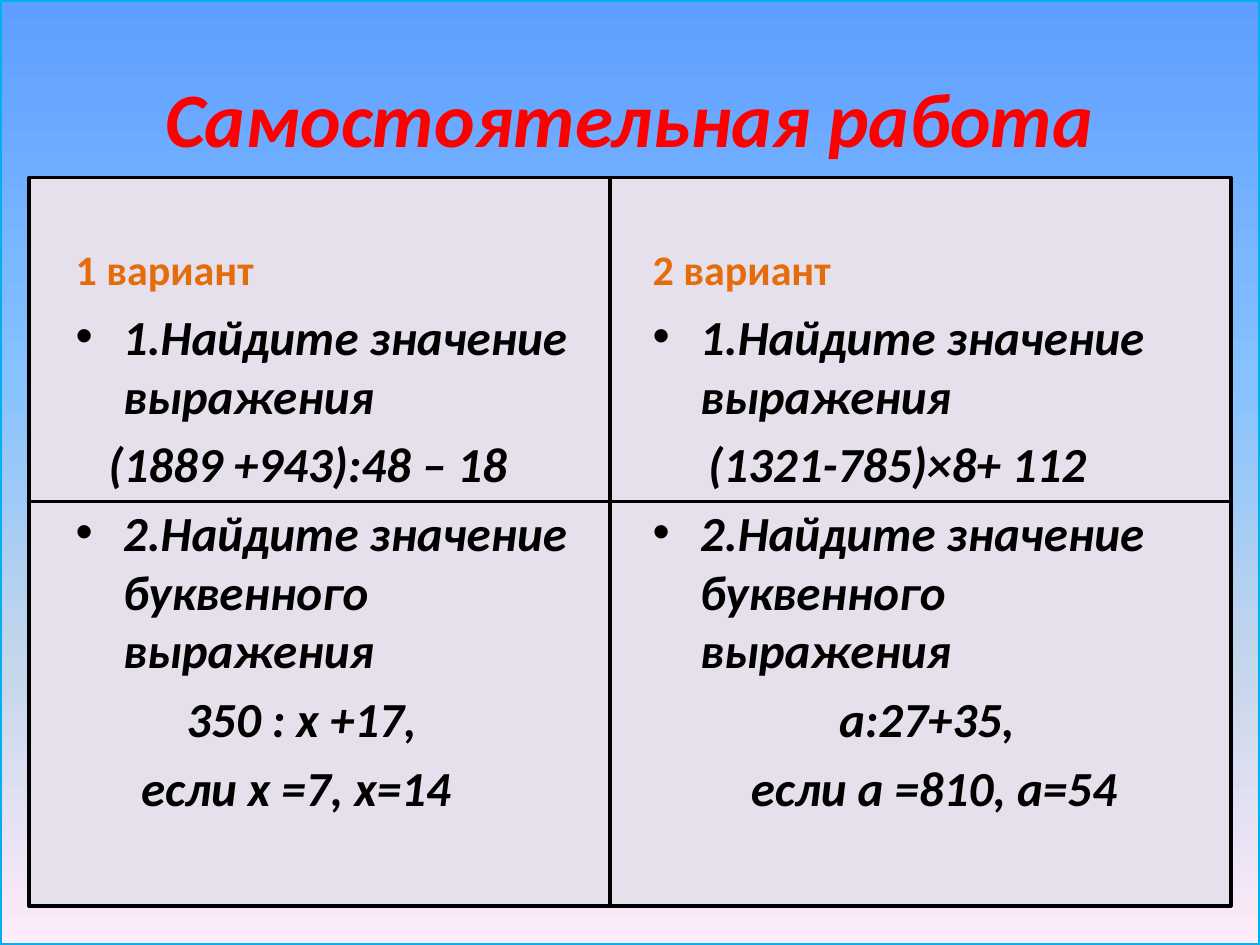
from copy import deepcopy

from pptx import Presentation
from pptx.dml.color import RGBColor
from pptx.enum import shapes, text
from pptx.oxml.ns import qn
from pptx.util import Inches, Pt

BLACK = RGBColor(0x00, 0x00, 0x00)
RED = RGBColor(0xFF, 0x00, 0x00)
ORANGE = RGBColor(0xE4, 0x6C, 0x0A)
LILAC = RGBColor(0xE6, 0xE0, 0xEC)
SKY = RGBColor(0x00, 0xB0, 0xF0)
GRADIENT = [
    (0, RGBColor(0x5E, 0x9E, 0xFF)),
    (0.4, RGBColor(0x85, 0xC2, 0xFF)),
    (0.7, RGBColor(0xC4, 0xD6, 0xEB)),
    (1, RGBColor(0xFF, 0xEB, 0xFA)),
]

# Panel edges and dividers, in inches
LEFT, TOP, RIGHT, BOTTOM = 0.23, 1.41, 9.77, 7.19
ROW_LINE, COLUMN_LINE = 3.98, 4.84

# Each variant: column left, heading, tasks as (text, indent); None means a bullet
FIRST_TASK = ("1.Найдите значение выражения", None)
SECOND_TASK = ("2.Найдите значение буквенного выражения", None)
VARIANTS = [
    (0.5, "1 вариант", [
        FIRST_TASK, ("(1889 +943):48 – 18", 0.26),
        SECOND_TASK, ("350 : х +17,", 0.88), ("если х =7, х=14", 0.52)]),
    (5.08, "2 вариант", [
        FIRST_TASK, ("(1321-785)×8+ 112", 0.44),
        SECOND_TASK, ("а:27+35,", 1.48), ("если а =810, а=54", 0.78)]),
]


def add_rectangle(slide, left, top, width, height, line_color):
    shape = slide.shapes.add_shape(
        shapes.MSO_SHAPE.RECTANGLE,
        Inches(left), Inches(top), Inches(width), Inches(height))
    shape.shadow.inherit = False
    shape.line.color.rgb = line_color
    shape.line.width = Pt(2)
    return shape


def fill_gradient(shape, stops):
    shape.fill.gradient()
    shape.fill.gradient_angle = 270
    stop_list = shape.element.spPr.find(qn("a:gradFill")).find(qn("a:gsLst"))
    for _ in range(len(stops) - len(stop_list)):
        stop_list.append(deepcopy(stop_list[0]))
    for stop, (position, color) in zip(shape.fill.gradient_stops, stops):
        stop.position = position
        stop.color.rgb = color


def add_divider(slide, x1, y1, x2, y2):
    line = slide.shapes.add_connector(
        shapes.MSO_CONNECTOR.STRAIGHT,
        Inches(x1), Inches(y1), Inches(x2), Inches(y2))
    line.line.color.rgb = BLACK
    line.line.width = Pt(2.25)
    properties = line.element.spPr
    properties.append(properties.makeelement(qn("a:effectLst"), {}))


def place(placeholder, left, top, width, height, anchor):
    placeholder.left, placeholder.top = Inches(left), Inches(top)
    placeholder.width, placeholder.height = Inches(width), Inches(height)
    frame = placeholder.text_frame
    frame.word_wrap = True
    frame.auto_size = text.MSO_AUTO_SIZE.NONE
    frame.vertical_anchor = anchor
    return frame


def write(paragraph, content, *, size, color, italic=True):
    run = paragraph.add_run()
    run.text = content
    font = run.font
    font.name, font.size = "Calibri", Pt(size)
    font.bold, font.italic = True, italic
    font.color.rgb = color


def indent_without_bullet(paragraph, indent):
    properties = paragraph._p.get_or_add_pPr()
    properties.set("marL", str(Inches(indent)))
    properties.set("indent", "0")
    properties.append(properties.makeelement(qn("a:buNone"), {}))


def fill_variant(heading, body, left, name, tasks):
    frame = place(heading, left, 1.68, 4.42, 0.7, text.MSO_ANCHOR.BOTTOM)
    write(frame.paragraphs[0], name, size=24, color=ORANGE, italic=False)

    frame = place(body, left, 2.38, 4.42, 4.32, text.MSO_ANCHOR.TOP)
    for index, (content, indent) in enumerate(tasks):
        paragraph = frame.add_paragraph() if index else frame.paragraphs[0]
        if indent is not None:
            indent_without_bullet(paragraph, indent)
        write(paragraph, content, size=28, color=BLACK)


def main():
    presentation = Presentation()
    presentation.slide_width, presentation.slide_height = Inches(10), Inches(7.5)
    slide = presentation.slides.add_slide(presentation.slide_layouts[4])
    title, *columns = list(slide.placeholders)[:5]

    # Background and panel, moved behind the placeholders
    background = add_rectangle(slide, 0, 0, 10, 7.5, SKY)
    fill_gradient(background, GRADIENT)
    panel = add_rectangle(slide, LEFT, TOP, RIGHT - LEFT, BOTTOM - TOP, BLACK)
    panel.fill.solid()
    panel.fill.fore_color.rgb = LILAC
    for shape in (background, panel):
        title.element.addprevious(shape.element)

    # Title
    frame = place(title, 0.5, 0.3, 9, 1.25, text.MSO_ANCHOR.MIDDLE)
    frame.paragraphs[0].alignment = text.PP_ALIGN.CENTER
    write(frame.paragraphs[0], "Самостоятельная работа", size=44, color=RED)

    # Two variants, each a heading and a task list
    for heading, body, variant in zip(columns[::2], columns[1::2], VARIANTS):
        fill_variant(heading, body, *variant)

    # Dividers
    add_divider(slide, LEFT, ROW_LINE, RIGHT, ROW_LINE)
    add_divider(slide, COLUMN_LINE, BOTTOM, COLUMN_LINE, TOP)

    presentation.save("out.pptx")


if __name__ == "__main__":
    main()
